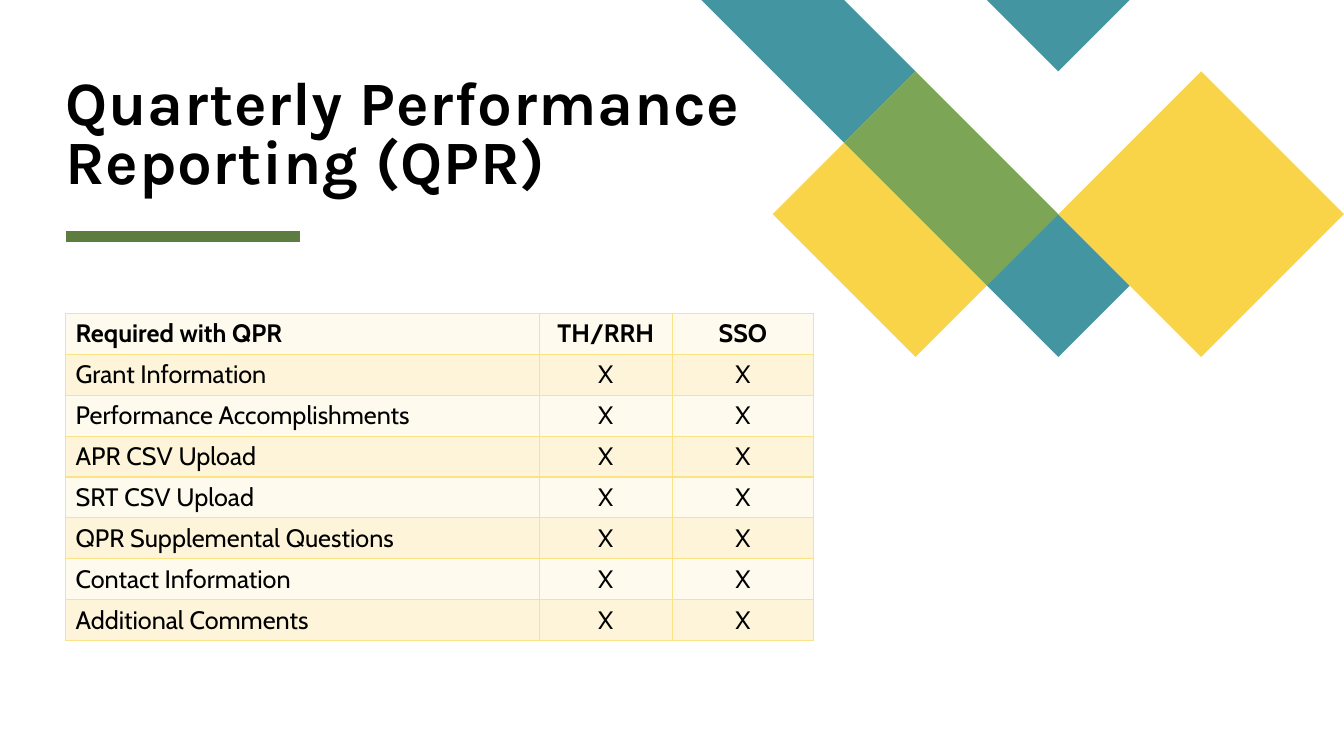
from typing import NamedTuple

from lxml import etree
from pptx import Presentation
from pptx.dml.color import RGBColor
from pptx.enum.text import MSO_ANCHOR, PP_ALIGN
from pptx.oxml.ns import qn
from pptx.util import Pt

LEFT, CENTER = PP_ALIGN.LEFT, PP_ALIGN.CENTER
BOTTOM = MSO_ANCHOR.BOTTOM

COLORS = {
    "teal": "4495A2",
    "yellow": "F9D448",
    "green": "7CA655",
    "rule": "5D7D40",
    "text": "000000",
    "border": "FBE284",
    "light_row": "FEFAED",
    "dark_row": "FDF4D9",
}
MARGIN = 46.8
CONTENT_WIDTH = 534.2
GRID_LEFT, GRID_STEP = 501, 51
COLUMN_WIDTHS = (338.4, 95, 100.8)
TABLE_TOP, ROW_HEIGHT = 223.9, 29.2

HEADINGS = ("Required with QPR", "TH/RRH", "SSO")
REQUIREMENTS = (
    "Grant Information",
    "Performance Accomplishments",
    "APR CSV Upload",
    "SRT CSV Upload",
    "QPR Supplemental Questions",
    "Contact Information",
    "Additional Comments",
)


class Tile(NamedTuple):
    """Outlines of one colour, in steps of the diagonal grid."""
    color: str
    outlines: tuple


TILES = (
    Tile("teal", (((3, 1), (2, 0), (0, 0), (2, 2)),
                  ((6, 4), (5, 3), (4, 4), (5, 5)))),
    Tile("yellow", (((2, 2), (1, 3), (3, 5), (4, 4)),)),
    Tile("teal", (((6, 0), (4, 0), (5, 1)),)),
    Tile("green", (((3, 1), (2, 2), (4, 4), (5, 3)),)),
    Tile("yellow", (((9, 3), (7, 1), (5, 3), (7, 5)),)),
)


def rgb(name: str) -> RGBColor:
    return RGBColor.from_string(COLORS[name])


def grid_point(column: int, row: int) -> tuple:
    return Pt(GRID_LEFT + column * GRID_STEP), Pt(row * GRID_STEP)


def draw_tile(slide, tile: Tile) -> None:
    first, *others = [[grid_point(*corner) for corner in outline]
                      for outline in tile.outlines]
    builder = slide.shapes.build_freeform(*first[0])
    builder.add_line_segments(first[1:], close=True)
    for outline in others:
        builder.move_to(*outline[0])
        builder.add_line_segments(outline[1:], close=True)
    shape = builder.convert_to_shape()
    shape.shadow.inherit = False
    shape.fill.solid()
    shape.fill.fore_color.rgb = rgb(tile.color)
    shape.line.fill.background()


def draw_rule(slide) -> None:
    y = Pt(169.2)
    rule = slide.shapes.add_connector(1, Pt(MARGIN), y, Pt(214.4), y)
    rule.line.color.rgb = rgb("rule")
    rule.line.width = Pt(8)
    etree.SubElement(rule._element.spPr, qn("a:effectLst"))


def draw_title(slide, title: str) -> None:
    box = slide.shapes.add_textbox(Pt(MARGIN), Pt(15.1), Pt(CONTENT_WIDTH), Pt(125.3))
    frame = box.text_frame
    frame.word_wrap = True
    frame.vertical_anchor = BOTTOM
    frame.margin_left = frame.margin_top = frame.margin_right = frame.margin_bottom = 0
    paragraph = frame.paragraphs[0]
    run = paragraph.add_run()
    run.text = title
    paragraph.line_spacing = 0.8
    font = paragraph.font
    font.name, font.size, font.bold = "Karla", Pt(44), True
    font.color.rgb = rgb("text")
    run.font._element.set("spc", "50")


def add_borders(cell) -> None:
    properties = cell._tc.get_or_add_tcPr()
    for position, side in enumerate(("a:lnL", "a:lnR", "a:lnT", "a:lnB")):
        line = etree.Element(qn(side), w=str(Pt(1)))
        fill = etree.SubElement(line, qn("a:solidFill"))
        etree.SubElement(fill, qn("a:srgbClr"), val=COLORS["border"])
        properties.insert(position, line)


def fill_cell(cell, text: str, color: str, align: PP_ALIGN, bold: bool) -> None:
    cell.text = text
    cell.fill.solid()
    cell.fill.fore_color.rgb = rgb(color)
    paragraph = cell.text_frame.paragraphs[0]
    paragraph.alignment = align
    font = paragraph.font
    font.name, font.size, font.bold = "Cabin", Pt(18), bold
    font.color.rgb = rgb("text")
    add_borders(cell)


def draw_requirements(slide) -> None:
    rows = [HEADINGS] + [(name, "X", "X") for name in REQUIREMENTS]
    table = slide.shapes.add_table(
        len(rows), len(HEADINGS), Pt(MARGIN), Pt(TABLE_TOP),
        Pt(CONTENT_WIDTH), Pt(ROW_HEIGHT * len(rows))).table
    table.first_row = table.horz_banding = False
    for column, width in zip(table.columns, COLUMN_WIDTHS):
        column.width = Pt(width)
    for r, texts in enumerate(rows):
        table.rows[r].height = Pt(ROW_HEIGHT)
        color = "dark_row" if r % 2 else "light_row"
        for c, text in enumerate(texts):
            fill_cell(table.cell(r, c), text, color, CENTER if c else LEFT, r == 0)


def main() -> None:
    presentation = Presentation()
    presentation.slide_width, presentation.slide_height = Pt(960), Pt(540)
    slide = presentation.slides.add_slide(presentation.slide_layouts[6])
    for tile in TILES:
        draw_tile(slide, tile)
    draw_rule(slide)
    draw_title(slide, "Quarterly Performance Reporting (QPR)")
    draw_requirements(slide)
    presentation.save("out.pptx")


if __name__ == "__main__":
    main()
